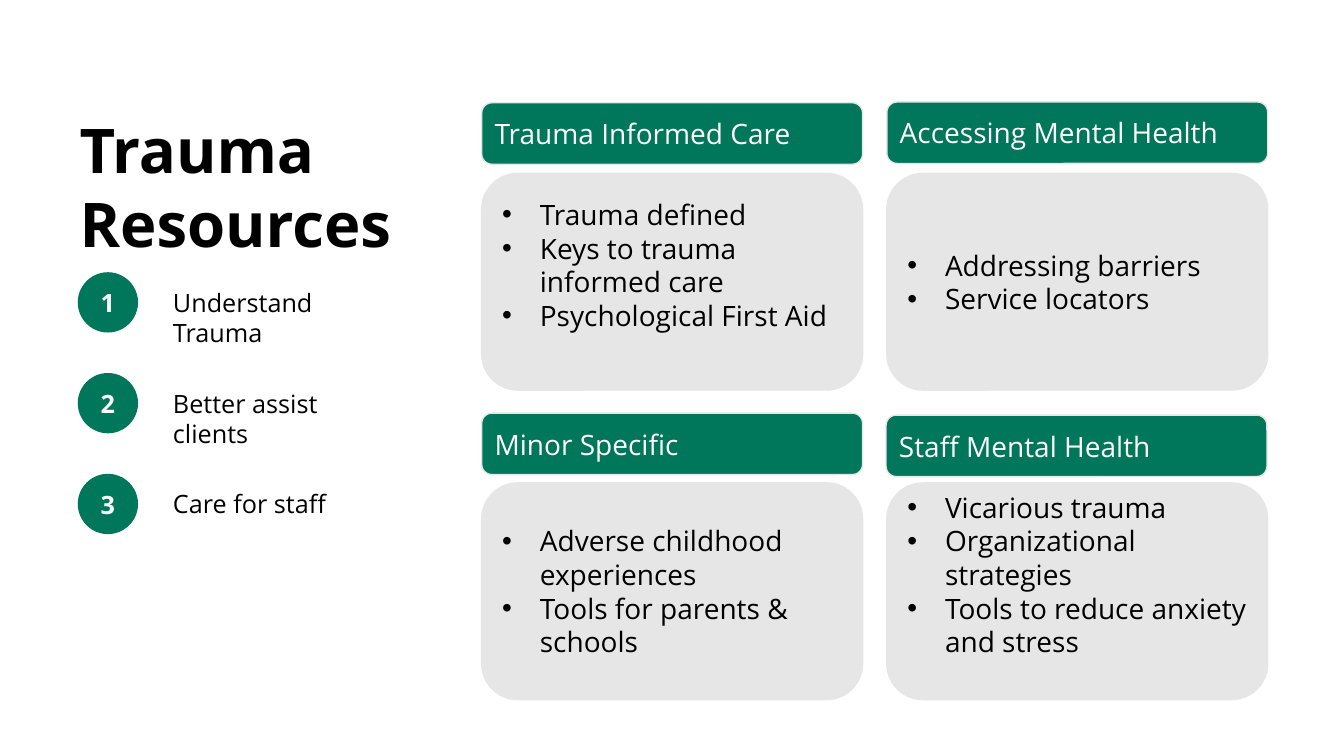
from lxml import etree
from pptx import Presentation
from pptx.dml.color import RGBColor
from pptx.enum.shapes import MSO_SHAPE
from pptx.enum.text import MSO_ANCHOR, MSO_AUTO_SIZE, PP_ALIGN
from pptx.oxml.ns import qn
from pptx.util import Cm, Pt

OVAL, ROUND = MSO_SHAPE.OVAL, MSO_SHAPE.ROUNDED_RECTANGLE
TOP, MIDDLE = MSO_ANCHOR.TOP, MSO_ANCHOR.MIDDLE
LEFT, CENTER = PP_ALIGN.LEFT, PP_ALIGN.CENTER
NO_FIT, GROW = MSO_AUTO_SIZE.NONE, MSO_AUTO_SIZE.SHAPE_TO_FIT_TEXT

FONT = "Open Sans"
GREEN, GRAY, WHITE, BLACK = "00765A", "E7E6E6", "FFFFFF", "000000"

STEPS = ["Understand Trauma", "Better assist clients", "Care for staff"]

# Column, row, header left and top, header, bullets, bottom inset
CARDS = [
    (0, 0, 12.14, 2.59, "Trauma Informed Care",
     ["Trauma defined", "Keys to trauma informed care",
      "Psychological First Aid"], 0.98),
    (1, 0, 22.35, 2.57, "Accessing Mental Health",
     ["Addressing barriers", "Service locators"], 0.13),
    (0, 1, 12.14, 10.41, "Minor Specific",
     ["Adverse childhood experiences", "Tools for parents & schools"], 0.13),
    (1, 1, 22.33, 10.46, "Staff Mental Health",
     ["Vicarious trauma", "Organizational strategies",
      "Tools to reduce anxiety and stress"], 0.98),
]


def color(code):
    return RGBColor.from_string(code)


def assign(item, values):
    """Set each named attribute of item."""
    for name, value in values.items():
        setattr(item, name, value)


def write(frame, lines, size, ink, bold=False, align=LEFT, **format):
    """Fill a text frame with one paragraph per line."""
    assign(frame, {"word_wrap": True, "vertical_anchor": MIDDLE, **format})
    frame.text = "\n".join(lines)
    for para in frame.paragraphs:
        para.alignment = align
        for run in para.runs:
            assign(run.font, {"name": FONT, "size": Pt(size), "bold": bold})
            run.font.color.rgb = color(ink)


def add_bullets(frame):
    for para in frame.paragraphs:
        props = para._p.get_or_add_pPr()
        props.set("marL", str(Cm(0.95)))
        props.set("indent", str(-Cm(0.95)))
        etree.SubElement(props, qn("a:buFont")).set("typeface", "Arial")
        etree.SubElement(props, qn("a:buChar")).set("char", "•")


def add_shape(slide, kind, box, fill, edge=None):
    shape = slide.shapes.add_shape(kind, *map(Cm, box))
    shape.shadow.inherit = False
    shape.fill.solid()
    shape.fill.fore_color.rgb = color(fill)
    if edge:
        shape.line.color.rgb = color(edge)
        shape.line.width = Pt(1)
    else:
        shape.line.fill.background()
    return shape.text_frame


def add_title(slide):
    title = slide.shapes.title
    assign(title, {"left": Cm(1.75), "top": Cm(2.69),
                   "width": Cm(18.49), "height": Cm(4.01)})
    write(title.text_frame, ["Trauma \vResources"], 44, BLACK, True,
          vertical_anchor=TOP, auto_size=NO_FIT)


def add_step(slide, index, text):
    top = 6.86 + index * 2.54
    disk = add_shape(slide, OVAL, (1.96, top, 1.52, 1.52), GREEN)
    write(disk, [str(index + 1)], 18, WHITE, True, CENTER)
    label = slide.shapes.add_textbox(Cm(4.11), Cm(top + 0.25),
                                     Cm(5.16), Cm(1.8))
    write(label.text_frame, [text], 18, BLACK,
          vertical_anchor=TOP, auto_size=GROW)


def add_card(slide, col, row, left, top, head, items, inset):
    box = (12.14 + col * 10.21, 4.37 + row * 7.8, 9.6, 5.46)
    body = add_shape(slide, ROUND, box, GRAY, GRAY)
    write(body, items, 20, BLACK, margin_bottom=Cm(inset))
    add_bullets(body)
    bar = add_shape(slide, ROUND, (left, top, 9.6, 1.55), GREEN, GRAY)
    write(bar, [head], 20, WHITE)


def main():
    deck = Presentation()
    assign(deck, {"slide_width": Cm(33.87), "slide_height": Cm(19.05)})
    slide = deck.slides.add_slide(deck.slide_layouts[5])
    add_title(slide)
    for index, text in enumerate(STEPS):
        add_step(slide, index, text)
    for card in CARDS:
        add_card(slide, *card)
    deck.save("out.pptx")


if __name__ == "__main__":
    main()
